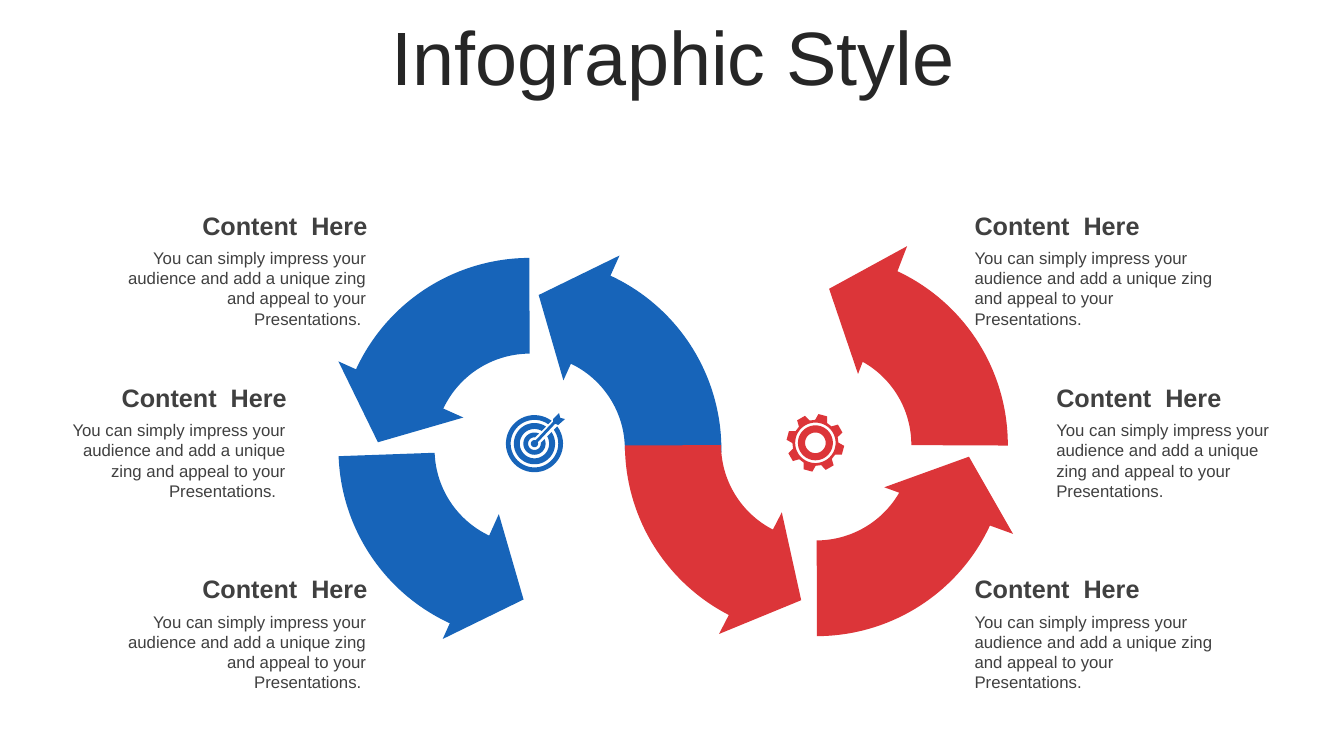
from math import asin, cos, degrees, radians, sin

from pptx import Presentation
from pptx.dml.color import RGBColor
from pptx.enum.shapes import MSO_SHAPE as SHAPE
from pptx.enum.text import MSO_ANCHOR as ANCHOR, MSO_AUTO_SIZE as AUTO, PP_ALIGN as ALIGN
from pptx.util import Cm, Pt

BLUE, RED = "1764B9", "DC3539"
DARK, GREY = "262626", "404040"


def rgb(code):
    return RGBColor.from_string(code)


def polar(cx, cy, r, angle):
    return cx + r * cos(radians(angle)), cy + r * sin(radians(angle))


def arc(cx, cy, r, start, end, steps=48):
    return [polar(cx, cy, r, start + (end - start) * i / steps) for i in range(steps + 1)]


class Slide:
    font = "Arial"

    def __init__(self, prs):
        self.s = prs.slides.add_slide(prs.slide_layouts[5])

    def fill_text(self, tf, text, size, color, bold=False, align=ALIGN.LEFT, **frame):
        frame = {"word_wrap": True, "auto_size": AUTO.SHAPE_TO_FIT_TEXT, **frame}
        for name, value in frame.items():
            setattr(tf, name, value)
        p = tf.paragraphs[0]
        p.alignment = align
        r = p.add_run()
        r.text = text
        for name, value in {"name": self.font, "size": Pt(size), "bold": bold}.items():
            setattr(r.font, name, value)
        r.font.color.rgb = rgb(color)
        return p

    def title(self, text, x, y, w, h):
        sp = self.s.shapes.title
        for name, value in {"left": x, "top": y, "width": w, "height": h}.items():
            setattr(sp, name, Cm(value))
        p = self.fill_text(sp.text_frame, text, 54, DARK, align=ALIGN.CENTER,
                           vertical_anchor=ANCHOR.MIDDLE, auto_size=AUTO.NONE)
        p.line_spacing, p.space_before = 0.9, Pt(10)

    def text(self, text, x, y, w, h, size, **style):
        sp = self.s.shapes.add_textbox(Cm(x), Cm(y), Cm(w), Cm(h))
        self.fill_text(sp.text_frame, text, size, GREY, **style)

    def paint(self, sp, color):
        sp.shadow.inherit = False
        sp.fill.solid()
        sp.fill.fore_color.rgb = rgb(color)
        sp.line.fill.background()

    def shape(self, kind, x, y, w, h, color, rot, adjust, flip=False):
        sp = self.s.shapes.add_shape(kind, Cm(x), Cm(y), Cm(w), Cm(h))
        self.paint(sp, color)
        sp.rotation = rot
        for i, value in enumerate(adjust):
            sp.adjustments[i] = value
        if flip:
            sp._element.spPr.xfrm.set("flipH", "1")

    def outline(self, contours, color):
        contours = [[(Cm(x), Cm(y)) for x, y in points] for points in contours]
        fb = self.s.shapes.build_freeform(*contours[0][0])
        for i, points in enumerate(contours):
            if i:
                fb.move_to(*points[0])
            fb.add_line_segments(points[1:], close=True)
        self.paint(fb.convert_to_shape(), color)

    def arrow_ring(self, x, y, rot, color, heads, flip=False):
        size, head_w, head_h = 9.65, 3.45, 1.45
        for span in [(161.848, 202.047, 0.252), (108.103, 147.369, 0.25), (54.141, 92.254, 0.251)]:
            self.shape(SHAPE.BLOCK_ARC, x, y, size, size, color, rot, span, flip)
        for hx, hy, turn in heads:
            self.shape(SHAPE.ISOSCELES_TRIANGLE, hx, hy, head_w, head_h, color, turn, [0.495], flip)

    def target(self, cx, cy, color):
        rings = []
        for outer, inner in [(0.72, 0.6), (0.52, 0.37), (0.28, 0.16)]:
            # Each ring is open towards the upper right, where the dart enters
            a, b = (degrees(asin(0.1 / r)) for r in (outer, inner))
            rings.append(arc(cx, cy, outer, a - 45, 315 - a) + arc(cx, cy, inner, 315 - b, b - 45))
        self.outline(rings, color)
        self.outline([arc(cx, cy, 0.09, 0, 360)], color)
        dart = [(0.62, -0.77), (0.65, -0.65), (0.77, -0.62), (0.6, -0.47), (0.52, -0.5),
                (0.05, 0), (0, -0.05), (0.47, -0.55), (0.47, -0.62)]
        self.outline([[(cx + dx, cy + dy) for dx, dy in dart]], color)

    def gear(self, cx, cy, color):
        tooth = [(0.58, -15.5), (0.73, -9), (0.73, 9), (0.58, 15.5)]
        teeth = [polar(cx, cy, r, 45 * k - 75 + a) for k in range(8) for r, a in tooth]
        self.outline([teeth] + [arc(cx, cy, r, 0, 360) for r in (0.51, 0.44, 0.26)], color)

    def caption(self, x, y, w, h, align, tail=""):
        self.text("Content  Here", x, y, w, 1.02, 18, bold=True, align=align,
                  vertical_anchor=ANCHOR.MIDDLE)
        self.text("You can simply impress your audience and add a unique zing "
                  "and appeal to your Presentations." + tail,
                  x, y + 0.96, w - 0.03, h, 12, align=align)


def main():
    prs = Presentation()
    prs.slide_width, prs.slide_height = Cm(33.87), Cm(19.05)
    slide = Slide(prs)
    slide.title("Infographic Style", 0.89, 0.53, 32.16, 2.01)

    # Two rings of arrows
    slide.arrow_ring(8.53, 6.5, 24.2, BLUE,
                     [(10.8, 14.1, 114.2), (8.08, 9.75, 204.2), (12.52, 6.99, 294.2)])
    slide.arrow_ring(15.75, 6.38, 90, RED,
                     [(17.83, 14.05, 117.3), (22.43, 11.46, 19.9), (19.84, 6.83, 291)], flip=True)

    # Icons at the ring centres
    slide.target(13.47, 11.18, BLUE)
    slide.gear(20.55, 11.16, RED)

    # Captions on both sides
    rows = [(5.16, 2.79, 24.31, 6.72, 1.8, " "),
            (9.5, 1.57, 26.37, 5.91, 2.31, "  "),
            (14.33, 2.79, 24.31, 6.72, 1.8, " ")]
    for y, left, right, w, h, tail in rows:
        slide.caption(left, y, w, h, ALIGN.RIGHT, tail)
        slide.caption(right, y, w, h, ALIGN.LEFT)

    prs.save("out.pptx")


if __name__ == "__main__":
    main()
